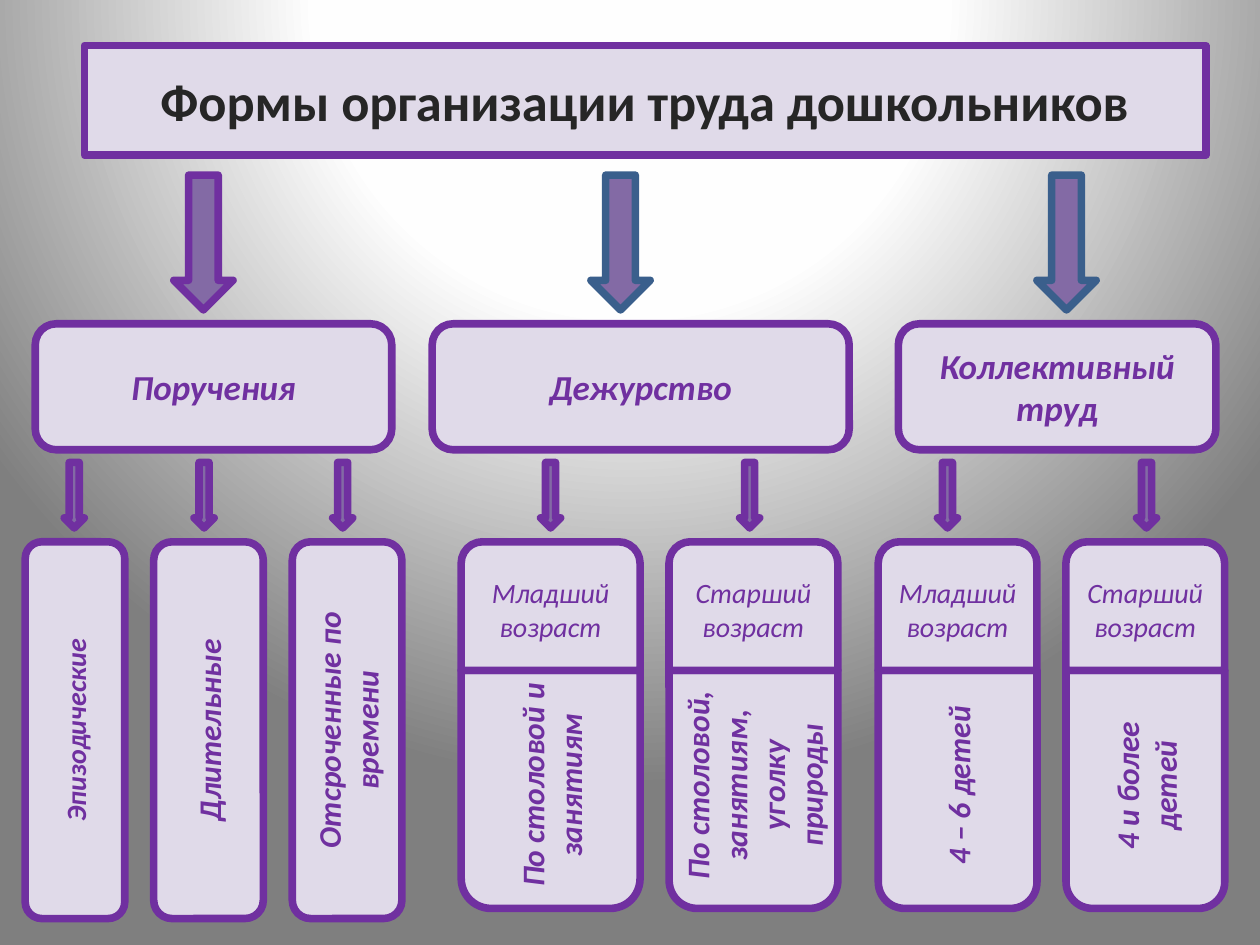
from lxml import etree
from pptx import Presentation
from pptx import util as u
from pptx.dml.color import RGBColor
from pptx.enum import shapes, text
from pptx.oxml import parse_xml
from pptx.oxml.ns import nsdecls, qn

COLORS = {
    "panel": "E0DAE9", "violet": "7030A0", "arrow": "836AA5",
    "blue": "3A5F8C", "title": "262626",
}
BACKDROP = [(0, "FFFFFF"), (40, "FEFEFE"), (100, "7F7F7F")]
FONT = "Calibri"
OUTLINE = u.Pt(4.33)
COLUMNS, ROWS = 100, 75
WIDTH, HEIGHT = u.Inches(10), u.Inches(7.5)

TITLE_BOX = (6.7, 3.6, 89, 8.7)
MAIN_ARROW = (13.9, 4.7, 10.7)  # top, width, height
FORM_ROW = (25.7, 10)           # top, height
SMALL_ARROW = (36.7, 1.6, 5.2)
DETAIL_TOP, DETAIL_HEIGHT = 43, 29.9
AGE_HEIGHT, DUTY_HEIGHT = 10.2, 18.9

# Each detail: left, width, arrow centre, age group or None, wording, size
FORMS = [
    dict(name="Поручения", span=(2.8, 28.3), arrow=16.15, outline="violet", details=[
        (2, 7.9, 5.9, None, "Эпизодические", 16),
        (12.2, 8.7, 16.2, None, "Длительные", 18),
        (23.2, 8.7, 27.2, None, "Отсроченные по времени", 18)]),
    dict(name="Дежурство", span=(34.3, 33.1), arrow=49.25, outline="blue", details=[
        (36.6, 14.2, 43.7, "Младший возраст", "По столовой и занятиям", 18),
        (53.1, 13.4, 59.5, "Старший возраст", "По столовой, занятиям, уголку природы", 18)]),
    dict(name="Коллективный труд", span=(71.3, 25.2), arrow=84.65, outline="blue", details=[
        (69.7, 12.6, 75.2, "Младший возраст", "4 – 6 детей", 18),
        (84.6, 12.6, 91, "Старший возраст", "4 и более детей", 18)]),
]


def on_grid(left, top, width, height):
    col, row = WIDTH / COLUMNS, HEIGHT / ROWS
    return [round(v) for v in (left * col, top * row, width * col, height * row)]


def color(name):
    return RGBColor.from_string(COLORS[name])


def paint(shape, fill, outline):
    shape.fill.solid()
    shape.fill.fore_color.rgb = color(fill)
    shape.line.color.rgb = color(outline)
    shape.line.width = OUTLINE


def write(shape, wording, size=20, ink="violet", bold=True, italic=True, direction=None):
    frame = shape.text_frame
    frame.text = wording
    frame.word_wrap = True
    frame.auto_size = text.MSO_AUTO_SIZE.NONE
    frame.vertical_anchor = text.MSO_ANCHOR.MIDDLE
    if direction:
        shape.element.txBody.find(qn("a:bodyPr")).set("vert", direction)
    paragraph = frame.paragraphs[0]
    paragraph.alignment = text.PP_ALIGN.CENTER
    font = paragraph.runs[0].font
    font.name, font.size, font.bold, font.italic = FONT, u.Pt(size), bold, italic
    font.color.rgb = color(ink)


def add_shape(slide, kind, box, fill="panel", outline="violet"):
    shape = slide.shapes.add_shape(kind, *on_grid(*box))
    shape.shadow.inherit = False
    paint(shape, fill, outline)
    return shape


def add_arrow(slide, centre, size, outline="violet"):
    top, width, height = size
    add_shape(slide, shapes.MSO_SHAPE.DOWN_ARROW,
              (centre - width / 2, top, width, height), "arrow", outline)


def add_backdrop(slide):
    stops = "".join(f'<a:gs pos="{share * 1000}"><a:srgbClr val="{hue}"/></a:gs>'
                    for share, hue in BACKDROP)
    slide.element.cSld.insert(0, parse_xml(
        f'<p:bg {nsdecls("p", "a")}><p:bgPr><a:gradFill rotWithShape="1">'
        f'<a:gsLst>{stops}</a:gsLst><a:path path="circle">'
        '<a:fillToRect l="50000" t="-80000" r="50000" b="180000"/></a:path>'
        '</a:gradFill><a:effectLst/></p:bgPr></p:bg>'))


def add_title(slide, box):
    title = slide.shapes.title
    title.left, title.top, title.width, title.height = on_grid(*box)
    outline = etree.SubElement(title.element.spPr, qn("a:prstGeom"), prst="roundRect")
    etree.SubElement(outline, qn("a:avLst"))
    paint(title, "panel", "violet")
    write(title, "Формы организации труда дошкольников", size=30, ink="title", italic=False)


def add_detail(slide, box, age, wording, size):
    """One tall card, or an age group above its duty when an age is given."""
    left, top, width, height = box
    if age is None:
        card = add_shape(slide, shapes.MSO_SHAPE.ROUNDED_RECTANGLE, box)
        write(card, wording, size, direction="vert270")
        return
    half = shapes.MSO_SHAPE.ROUND_2_SAME_RECTANGLE
    duty = add_shape(slide, half, (left, top + AGE_HEIGHT, width, DUTY_HEIGHT))
    duty.rotation = 180
    write(duty, wording, size, direction="vert")
    write(add_shape(slide, half, (left, top, width, AGE_HEIGHT)), age, 16, bold=False)


def add_form(slide, form):
    add_arrow(slide, form["arrow"], MAIN_ARROW, form["outline"])
    left, width = form["span"]
    top, height = FORM_ROW
    heading = add_shape(slide, shapes.MSO_SHAPE.ROUNDED_RECTANGLE, (left, top, width, height))
    write(heading, form["name"])
    for left, width, centre, age, wording, size in form["details"]:
        add_arrow(slide, centre, SMALL_ARROW)
        add_detail(slide, (left, DETAIL_TOP, width, DETAIL_HEIGHT), age, wording, size)


def main():
    deck = Presentation()
    deck.slide_width, deck.slide_height = WIDTH, HEIGHT
    slide = deck.slides.add_slide(deck.slide_layouts.get_by_name("Title Only"))
    add_backdrop(slide)
    add_title(slide, TITLE_BOX)
    for form in FORMS:
        add_form(slide, form)
    deck.save("out.pptx")


if __name__ == "__main__":
    main()
